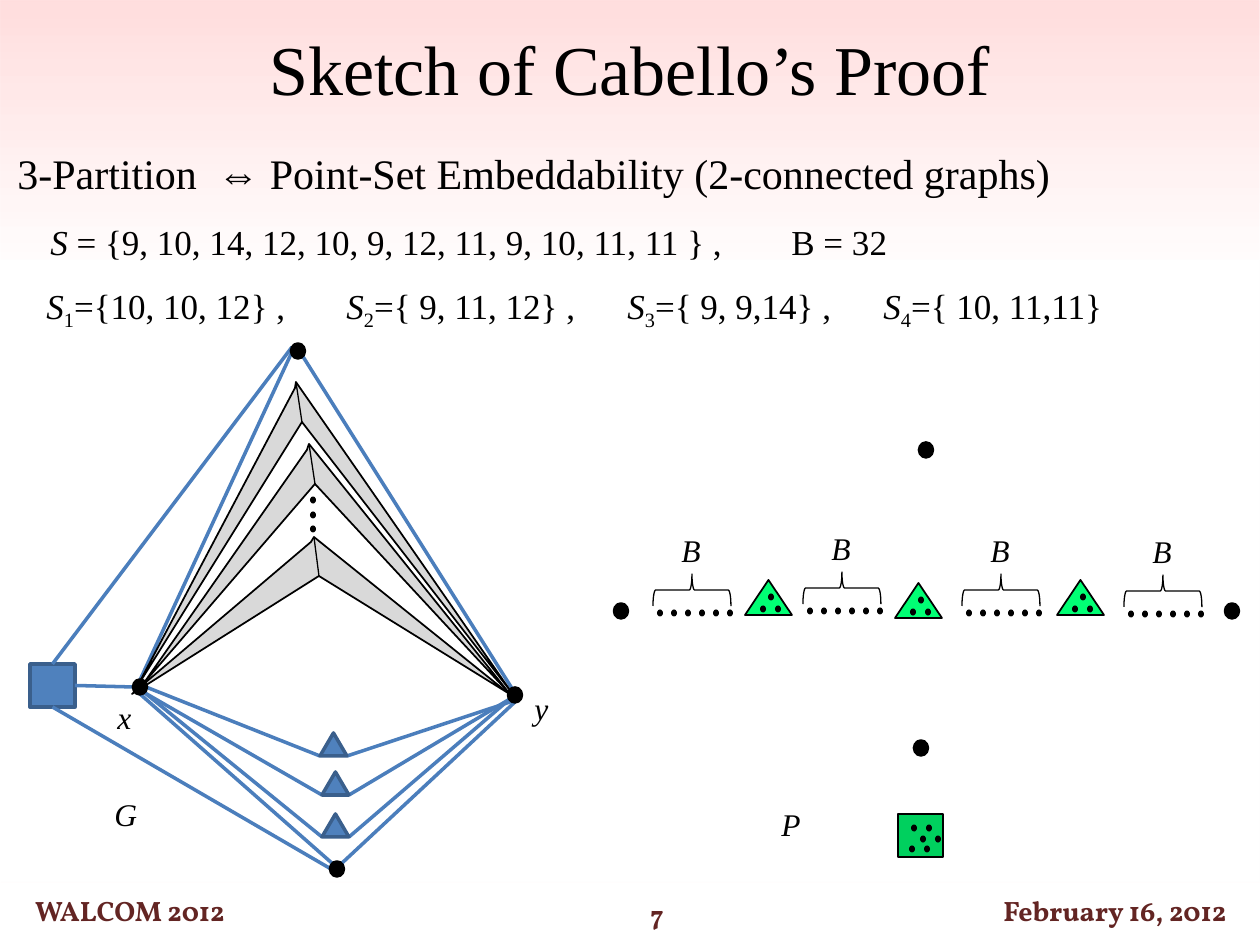
from lxml.etree import SubElement
from pptx import Presentation
from pptx.dml.color import RGBColor
from pptx.enum.shapes import MSO_CONNECTOR, MSO_SHAPE
from pptx.enum.text import MSO_ANCHOR, PP_ALIGN
from pptx.oxml.ns import qn
from pptx.util import Pt

SCALE = 914400 / 126
BLACK = RGBColor(0x00, 0x00, 0x00)
RED = RGBColor(0xFF, 0x00, 0x00)
MAROON = RGBColor(0x63, 0x25, 0x23)
EDGE_BLUE = RGBColor(0x4B, 0x7E, 0xBC)
NODE_BLUE = RGBColor(0x4F, 0x81, 0xBD)
NODE_BORDER = RGBColor(0x3A, 0x5F, 0x8C)
GRAY = RGBColor(0xD9, 0xD9, 0xD9)
LIGHT_GREEN = RGBColor(0x01, 0xFF, 0x74)
DARK_GREEN = RGBColor(0x00, 0xD0, 0x5E)


def px(value):
    return round(value * SCALE)


class Sketch:
    """Draws the elements of one slide in a shared style, with lengths in px."""

    body = {"name": "Times New Roman", "size": Pt(20), "bold": False, "italic": False}
    label_style = {"size": Pt(18), "italic": True}
    footer_style = {"name": "Vollkorn", "size": Pt(16), "bold": True}

    def __init__(self, page):
        self.page = page

    def paint(self, shape, fill, line, width):
        shape.shadow.inherit = False
        if fill is None:
            shape.fill.background()
        else:
            shape.fill.solid()
            shape.fill.fore_color.rgb = fill
        if line is None:
            shape.line.fill.background()
        else:
            shape.line.color.rgb = line
            shape.line.width = Pt(width)
        return shape

    def shape(self, kind, left, top, width, height, fill=None, line=None, weight=1):
        shape = self.page.shapes.add_shape(kind, px(left), px(top), px(width), px(height))
        return self.paint(shape, fill, line, weight)

    def backdrop(self, width, height):
        box = self.shape(MSO_SHAPE.RECTANGLE, 0, 0, width, height)
        box.fill.gradient()
        box.fill.gradient_angle = 90
        for stop, position in zip(box.fill.gradient_stops, (0.7, 1)):
            stop.position = position
            stop.color.rgb = RED
        for color, alpha in zip(box.element.iter(qn("a:srgbClr")), ("0", "13000")):
            SubElement(color, qn("a:alpha")).set("val", alpha)

    def add_spans(self, para, spans, style, color=BLACK):
        for text, changes in spans:
            span = para.add_run()
            span.text = text
            span.font.color.rgb = color
            values = {**self.body, **style, **changes}
            baseline = values.pop("baseline", None)
            for key, value in values.items():
                setattr(span.font, key, value)
            if baseline:
                span.font._element.set("baseline", baseline)

    def text(self, left, top, width, height, spans, style=None, wrap=True, align=None, tabs=()):
        box = self.page.shapes.add_textbox(px(left), px(top), px(width), px(height))
        box.text_frame.word_wrap = wrap
        para = box.text_frame.paragraphs[0]
        para.alignment = align
        self.add_spans(para, spans, style or {})
        if tabs:
            stops = SubElement(para._p.get_or_add_pPr(), qn("a:tabLst"))
            for position in tabs:
                stop = SubElement(stops, qn("a:tab"))
                stop.set("pos", str(px(position)))
                stop.set("algn", "l")

    def label(self, left, top, width, text):
        self.text(left, top, width, 50, [(text, {})], self.label_style, wrap=False)

    def footer(self, left, top, width, text):
        box = self.shape(MSO_SHAPE.ROUNDED_RECTANGLE, left, top, width, 44)
        box.text_frame.word_wrap = True
        box.text_frame.vertical_anchor = MSO_ANCHOR.MIDDLE
        para = box.text_frame.paragraphs[0]
        para.alignment = PP_ALIGN.CENTER
        self.add_spans(para, [(text, {})], self.footer_style, MAROON)

    def edge(self, start, end, color=EDGE_BLUE, width=2):
        line = self.page.shapes.add_connector(
            MSO_CONNECTOR.STRAIGHT, *(px(value) for value in (*start, *end)))
        line.line.color.rgb = color
        line.line.width = Pt(width)
        SubElement(line.element.spPr, qn("a:effectLst"))
        return line

    def wedge(self, points):
        builder = self.page.shapes.build_freeform(*points[0], scale=SCALE)
        builder.add_line_segments(points[1:], close=True)
        self.paint(builder.convert_to_shape(), GRAY, BLACK, 1)
        self.edge(points[2], points[4], BLACK, 0.75)

    def dot(self, x, y):
        self.shape(MSO_SHAPE.OVAL, x - 3, y - 3.5, 6, 7, BLACK)

    def vertex(self, x, y):
        self.shape(MSO_SHAPE.OVAL, x - 6.5, y - 7, 13, 14, BLACK, BLACK, 2)

    def bucket(self, x, y):
        for index in range(6):
            self.dot(x - 32 + 14 * index, y + 23)
        self.label(x - 23, y - 65, 47, "B")
        brace = self.shape(MSO_SHAPE.RIGHT_BRACE, x - 16, y - 39, 32, 78, None, BLACK, 0.75)
        brace.rotation = 270

    def separator(self, left, top):
        self.shape(MSO_SHAPE.ISOSCELES_TRIANGLE, left, top, 47, 35, LIGHT_GREEN, BLACK)
        for x, y in ((26, 17), (33, 29), (18, 29)):
            self.dot(left + x, top + y)


def add_texts(sketch):
    sketch.footer(0, 888, 260, "WALCOM 2012")
    sketch.footer(970, 888, 290, "February 16, 2012")
    sketch.footer(527, 892, 260, "7")
    sketch.text(0, 19, 1260, 97, [("Sketch of Cabello’s Proof", {})],
                {"size": Pt(40)}, align=PP_ALIGN.CENTER)
    heading = "3-Partition\t⇔ Point-Set Embeddability (2-connected graphs)"
    sketch.text(5, 141, 1071, 63, [(heading, {})], {"size": Pt(24)}, tabs=[200])
    numbers = " = {9, 10, 14, 12, 10, 9, 12, 11, 9, 10, 11, 11 } ,\tB = 32"
    sketch.text(38, 214, 870, 55, [("S", {"italic": True}), (numbers, {})], tabs=[741])
    sets = ("={10, 10, 12} ,\t", "={ 9, 11, 12} ,\t", "={ 9, 9,14} ,\t", "={ 10, 11,11}")
    spans = []
    for number, members in enumerate(sets, 1):
        spans += [("S", {"italic": True}), (str(number), {"baseline": "-25000"}), (members, {})]
    sketch.text(34, 278, 1226, 97, spans, tabs=[300, 581, 837])


def add_graph(sketch):
    x, y, top, bottom = (140, 687), (515, 695), (298, 351), (337, 869)
    square = sketch.shape(MSO_SHAPE.RECTANGLE, 30, 664, 45, 43, NODE_BLUE, NODE_BORDER, 2)
    sketch.edge((292, 347), (53, 664)).end_connect(square, 0)
    sketch.edge((134, 687), (75, 685)).end_connect(square, 3)
    sketch.edge((53, 707), (331, 869)).begin_connect(square, 2)
    for start, end in (((302, 355), (513, 690)), ((292, 352), (140, 680)),
                       ((140, 694), (333, 864)), ((341, 864), (515, 702))):
        sketch.edge(start, end)
    for left, height, start, end in ((320, 733, (146, 687), (513, 701)),
                                     (322, 772, (145, 693), (510, 699)),
                                     (322, 814, (145, 693), (510, 699))):
        sketch.edge(start, (left, height + 23))
        sketch.edge((left + 27, height + 23), end)
        sketch.shape(MSO_SHAPE.ISOSCELES_TRIANGLE, left, height, 27, 23, NODE_BLUE, NODE_BORDER, 2)
    for points in (
        [(132, 694), (311, 542), (314, 537), (508, 693), (319, 576)],
        [(137, 687), (295, 388), (296, 382), (512, 693), (302, 422)],
        [(144, 683), (307, 450), (309, 444), (510, 694), (315, 484)],
    ):
        sketch.wedge(points)
    for height in (500, 515, 529):
        sketch.dot(313, height)
    for point in (x, y, top, bottom):
        sketch.vertex(*point)
    sketch.label(522, 683, 39, "y")
    sketch.label(105, 692, 39, "x")
    sketch.label(102, 789, 48, "G")


def add_point_set(sketch):
    for x, y in ((692, 590), (842, 588), (1001, 590), (1163, 591)):
        sketch.bucket(x, y)
    for left, top in ((745, 580), (895, 583), (1057, 580)):
        sketch.separator(left, top)
    sketch.shape(MSO_SHAPE.RECTANGLE, 898, 814, 45, 43, DARK_GREEN, BLACK)
    for x, y in ((914, 828), (923, 839), (912, 849)):
        sketch.dot(x, y)
        sketch.dot(x + 15, y)
    for x, y in ((921, 748), (926, 450), (621, 611), (1232, 611)):
        sketch.vertex(x, y)
    sketch.label(769, 799, 45, "P")


def main():
    deck = Presentation()
    deck.slide_width, deck.slide_height = px(1260), px(945)
    sketch = Sketch(deck.slides.add_slide(deck.slide_layouts[6]))
    sketch.backdrop(1260, 883)
    add_texts(sketch)
    add_graph(sketch)
    add_point_set(sketch)
    deck.save("out.pptx")


if __name__ == "__main__":
    main()
